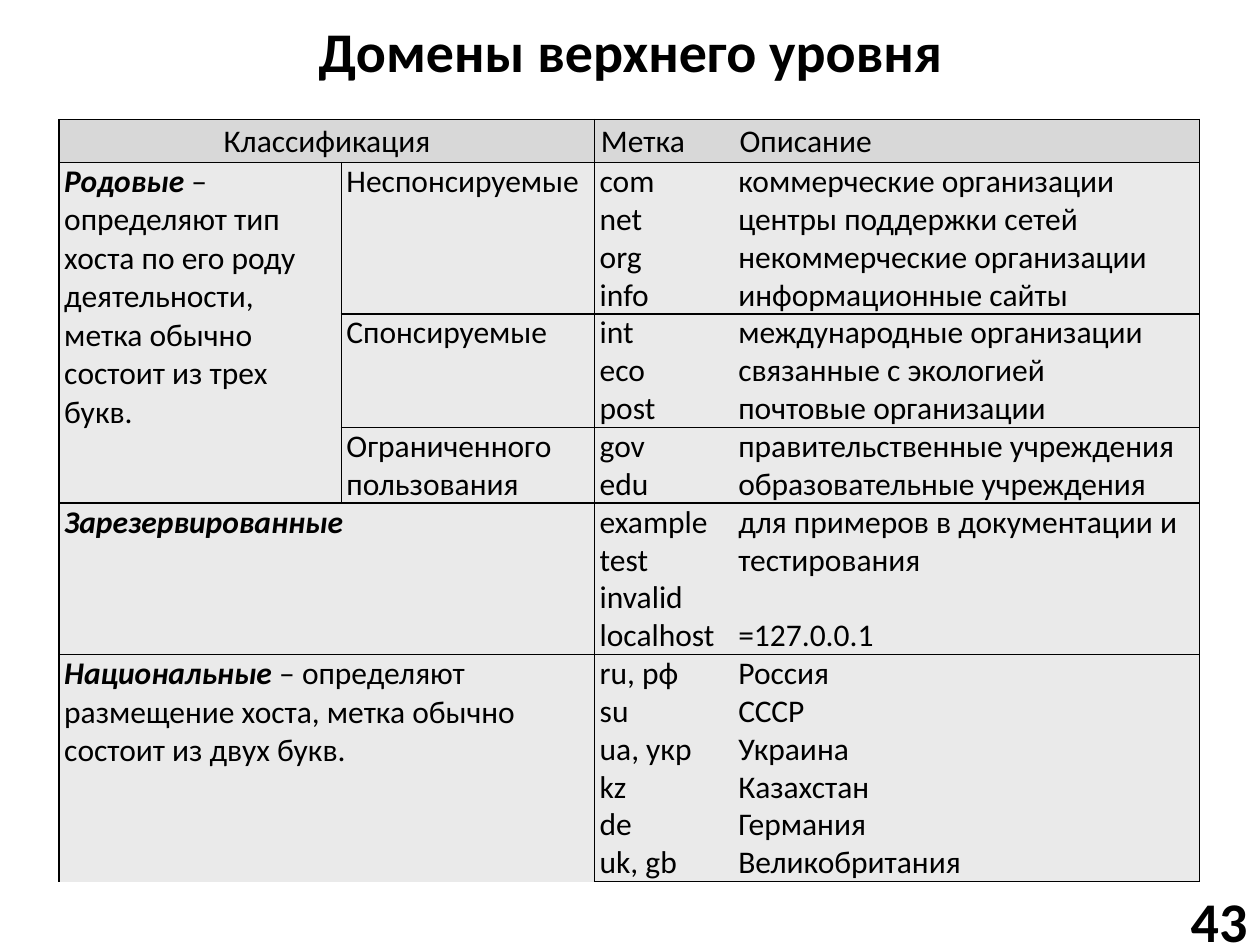
from lxml import etree
from pptx import Presentation
from pptx.dml.color import RGBColor
from pptx.enum.text import MSO_ANCHOR, PP_ALIGN
from pptx.oxml.ns import qn
from pptx.util import Inches, Pt

CENTER, LEFT, RIGHT = PP_ALIGN.CENTER, PP_ALIGN.LEFT, PP_ALIGN.RIGHT
TOP, MIDDLE = MSO_ANCHOR.TOP, MSO_ANCHOR.MIDDLE
BLACK = RGBColor(0x00, 0x00, 0x00)
HEADER_GRAY = RGBColor(0xD8, 0xD8, 0xD8)
BODY_GRAY = RGBColor(0xEA, 0xEA, 0xEA)

COLUMN_WIDTHS = (2.24, 2.01, 1.1, 3.7)
LABEL_COLUMN, DESCRIPTION_COLUMN = 2, 3

CLASSES = [
    ("Родовые ", "– определяют тип хоста по его роду деятельности, метка обычно состоит из трех букв.", [
        ("Неспонсируемые", [
            ("com", "коммерческие организации"),
            ("net", "центры поддержки сетей"),
            ("org", "некоммерческие организации"),
            ("info", "информационные сайты"),
        ]),
        ("Спонсируемые", [
            ("int", "международные организации"),
            ("eco", "связанные с экологией"),
            ("post", "почтовые организации"),
        ]),
        ("Ограниченного пользования", [
            ("gov", "правительственные учреждения"),
            ("edu", "образовательные учреждения"),
        ]),
    ]),
    ("Зарезервированные", "", [
        (None, [
            ("example", "для примеров в документации и тестирования"),
            ("test", None),
            ("invalid", None),
            ("localhost", "=127.0.0.1"),
        ]),
    ]),
    ("Национальные ", "– определяют размещение хоста, метка обычно состоит из двух букв.", [
        (None, [
            ("ru, рф", "Россия"),
            ("su", "СССР"),
            ("ua, укр", "Украина"),
            ("kz", "Казахстан"),
            ("de", "Германия"),
            ("uk, gb", "Великобритания"),
        ]),
    ]),
]


class DomainSlide:
    font = "Calibri"
    title_size = Pt(32)
    table_size = Pt(18)
    border = Pt(1)

    def __init__(self, presentation):
        self.slide = presentation.slides.add_slide(presentation.slide_layouts[6])

    def add_text(self, paragraph, text, size, bold=False, italic=False):
        run = paragraph.add_run()
        run.text = text
        run.font.name = self.font
        run.font.size = size
        run.font.bold = bold
        run.font.italic = italic
        run.font.color.rgb = BLACK

    def heading(self, text, left, top, width, height, align):
        frame = self.slide.shapes.add_textbox(
            Inches(left), Inches(top), Inches(width), Inches(height)).text_frame
        frame.word_wrap = True
        frame.vertical_anchor = MIDDLE
        paragraph = frame.paragraphs[0]
        paragraph.alignment = align
        self.add_text(paragraph, text, self.title_size, bold=True)

    def table(self, left, top, row_heights):
        table = self.slide.shapes.add_table(
            len(row_heights), len(COLUMN_WIDTHS), Inches(left), Inches(top),
            Inches(sum(COLUMN_WIDTHS)), Inches(sum(row_heights))).table
        table.first_row = False
        table.horz_banding = False
        for column, width in zip(table.columns, COLUMN_WIDTHS):
            column.width = Inches(width)
        for row, height in zip(table.rows, row_heights):
            row.height = Inches(height)
        return table

    def edge(self, cell, side, visible):
        line = etree.SubElement(cell._tc.get_or_add_tcPr(), qn(f"a:ln{side}"), w=str(self.border))
        if visible:
            fill = etree.SubElement(line, qn("a:solidFill"))
            etree.SubElement(fill, qn("a:srgbClr"), val=str(BLACK))
        else:
            etree.SubElement(line, qn("a:noFill"))

    def block(self, table, first_row, first_column, last_row, last_column):
        header = first_row == 0
        for row in range(first_row, last_row + 1):
            for column in range(first_column, last_column + 1):
                cell = table.cell(row, column)
                self.edge(cell, "L", column == first_column)
                self.edge(cell, "R", column == last_column)
                self.edge(cell, "T", row == first_row)
                self.edge(cell, "B", row == last_row)
                cell.fill.solid()
                cell.fill.fore_color.rgb = HEADER_GRAY if header else BODY_GRAY
                cell.margin_left = cell.margin_right = Inches(0.05 if header else 0.04)
                cell.margin_top = cell.margin_bottom = Inches(0.02 if header else 0)
                cell.vertical_anchor = MIDDLE if header else TOP

    def merged(self, table, first_row, first_column, last_row, last_column):
        self.block(table, first_row, first_column, last_row, last_column)
        origin = table.cell(first_row, first_column)
        if (first_row, first_column) != (last_row, last_column):
            origin.merge(table.cell(last_row, last_column))
        return origin

    def cell_text(self, cell, text, align=LEFT, emphasis=""):
        paragraph = cell.text_frame.paragraphs[0]
        paragraph.alignment = align
        if emphasis:
            self.add_text(paragraph, emphasis, self.table_size, bold=True, italic=True)
        if text:
            self.add_text(paragraph, text, self.table_size)

    def entries(self, table, first_row, domains):
        last_row = first_row + len(domains) - 1
        self.block(table, first_row, LABEL_COLUMN, last_row, DESCRIPTION_COLUMN)
        described_row = first_row
        for row, (label, description) in enumerate(domains, first_row):
            self.cell_text(table.cell(row, LABEL_COLUMN), label)
            if description:
                described_row = row
                self.cell_text(table.cell(row, DESCRIPTION_COLUMN), description)
            elif row == last_row or domains[row - first_row + 1][1]:
                table.cell(described_row, DESCRIPTION_COLUMN).merge(
                    table.cell(row, DESCRIPTION_COLUMN))
        return last_row


def main():
    presentation = Presentation()
    presentation.slide_width = Inches(10)
    presentation.slide_height = Inches(7.5)
    page = DomainSlide(presentation)

    page.heading("Домены верхнего уровня", 0.28, 0.05, 9.45, 0.69, CENTER)
    page.heading("43", 8.86, 7.1, 1.14, 0.4, RIGHT)

    domain_count = sum(len(domains) for _, _, kinds in CLASSES for _, domains in kinds)
    table = page.table(0.47, 0.95, [0.34] + [0.3] * domain_count)
    page.cell_text(page.merged(table, 0, 0, 0, 1), "Классификация", CENTER)
    page.block(table, 0, LABEL_COLUMN, 0, DESCRIPTION_COLUMN)
    page.cell_text(table.cell(0, LABEL_COLUMN), "Метка")
    page.cell_text(table.cell(0, DESCRIPTION_COLUMN), "Описание")

    row = 1
    for name, definition, kinds in CLASSES:
        class_row = row
        for kind, domains in kinds:
            last_row = page.entries(table, row, domains)
            if kind:
                page.cell_text(page.merged(table, row, 1, last_row, 1), kind)
            row = last_row + 1
        class_column = 0 if kinds[0][0] else 1
        class_cell = page.merged(table, class_row, 0, row - 1, class_column)
        page.cell_text(class_cell, definition, emphasis=name)

    presentation.save("out.pptx")


if __name__ == "__main__":
    main()
